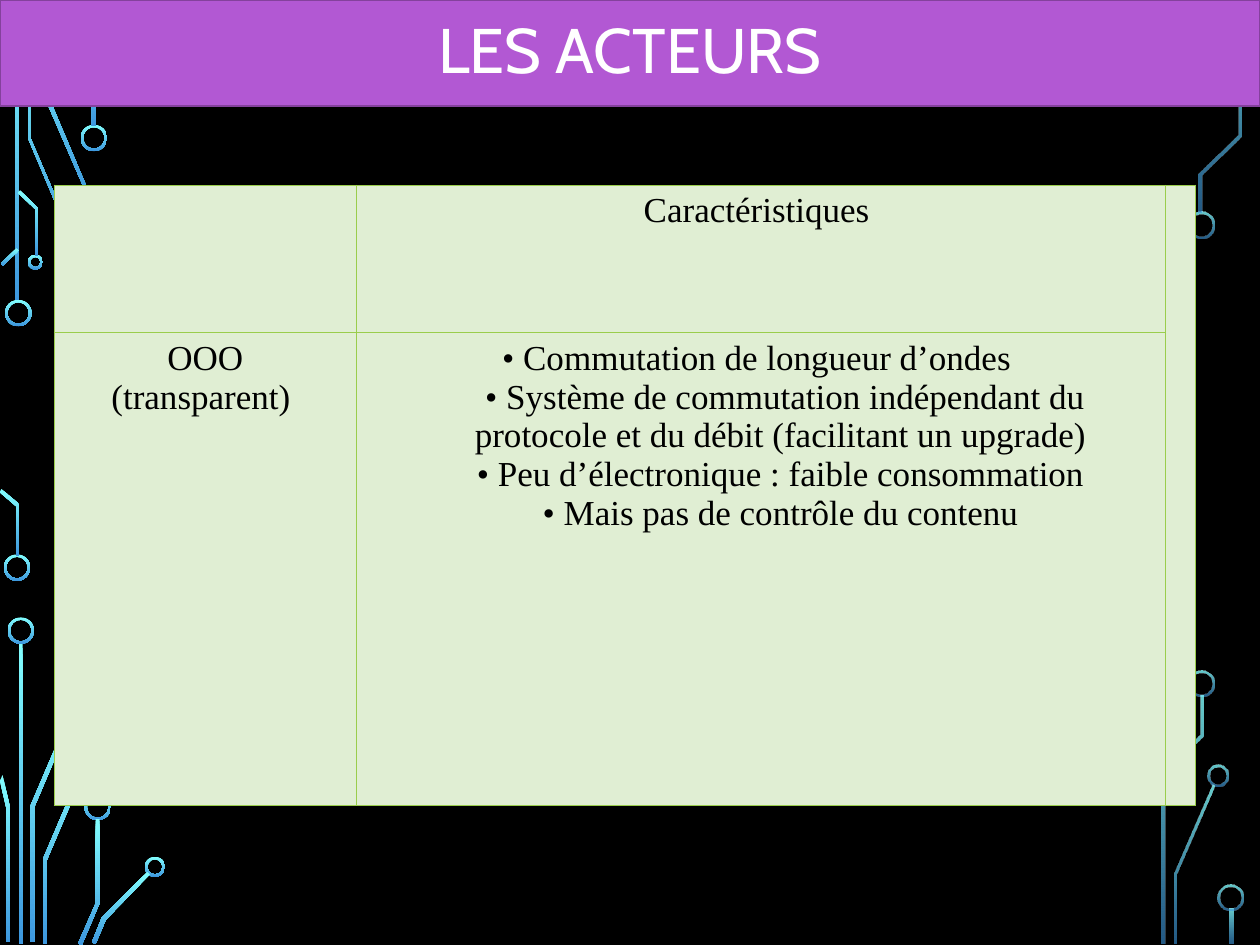
from lxml.etree import SubElement
from pptx import Presentation
from pptx.dml.color import RGBColor
from pptx.enum.shapes import MSO_SHAPE
from pptx.enum.text import MSO_ANCHOR, MSO_AUTO_SIZE, PP_ALIGN
from pptx.oxml.ns import qn
from pptx.util import Inches, Pt

TITLE = "LES ACTEURS"
FEATURES = [
    "• Commutation de longueur d’ondes ",
    "• Système de commutation indépendant du protocole et du débit (facilitant un upgrade) ",
    "• Peu d’électronique\u00a0: faible consommation ",
    "• Mais pas de contrôle du contenu ",
]
# Each cell is a list of paragraphs; a paragraph is a list of lines.
ROWS = [
    [[], [["Caractéristiques "]], []],
    [[["OOO"], ["(transparent) "]], [FEATURES], []],
]
COLUMN_WIDTHS = [2.4, 6.42, 0.24]
ROW_HEIGHTS = [1.17, 3.75]

# Circuit decoration: bars and rings by position, traces by outline.
LEFT_CIRCUIT = {
    "opacity": (100, 100),
    "bars": [(0.12, 0.01, 0.03, 2.39), (0.15, 5.1, 0.03, 2.39)],
    "rings": [  # left, top, diameter
        (0.04, 2.38, 0.21), (0.03, 4.4, 0.21), (0.64, 0.99, 0.21), (0.22, 2.02, 0.12),
        (0.06, 4.9, 0.21), (0.67, 6.3, 0.21), (1.15, 6.8, 0.16),
    ],
    "traces": [
        [(0.6, 1.99), (0.22, 1.09), (0.22, 0.01), (0.24, 0.01), (0.24, 1.09), (0.62, 1.98)],
        [(0.7, 1.57), (0.31, 0.67), (0.31, 0.01), (0.34, 0.01), (0.34, 0.66), (0.72, 1.56)],
        [(0.76, 1), (0.73, 1), (0.73, 0.33), (0.6, 0.01), (0.62, 0), (0.76, 0.33)],
        [(0.02, 2.11), (0.01, 2.09), (0.13, 1.97), (0.15, 1.99)],
        [(0.15, 4.41), (0.13, 4.41), (0.13, 4.02), (0, 3.91), (0.01, 3.88), (0.15, 4)],
        [(0.3, 2.03), (0.28, 2.03), (0.28, 1.66), (0.14, 1.53), (0.16, 1.51), (0.3, 1.65)],
        [(0.27, 7.48), (0.24, 7.48), (0.24, 6.4), (0.62, 5.51), (0.65, 5.52), (0.27, 6.41)],
        [(0.08, 7.48), (0.05, 7.48), (0.05, 6.41), (0, 6.2), (0.02, 6.15), (0.08, 6.41)],
        [(0.37, 7.49), (0.34, 7.49), (0.34, 6.82), (0.72, 5.93), (0.75, 5.94), (0.37, 6.83)],
        [(0.65, 7.5), (0.62, 7.49), (0.76, 7.17), (0.76, 6.5), (0.79, 6.5), (0.79, 7.17)],
        [(0.76, 7.49), (0.73, 7.48), (0.81, 7.28), (1.17, 6.92), (1.19, 6.94), (0.84, 7.3)],
    ],
}
RIGHT_CIRCUIT = {
    "opacity": (80, 60),
    "bars": [(9.76, 7.21, 0.03, 0.28)],
    "rings": [(9.43, 1.68, 0.21), (9.58, 6.07, 0.17), (9.43, 5.32, 0.21), (9.66, 7.02, 0.21)],
    "traces": [
        [(9.34, 7.49), (9.32, 7.49), (9.32, 6.93), (9.62, 6.23), (9.64, 6.24), (9.34, 6.94)],
        [(9.54, 1.69), (9.51, 1.69), (9.51, 1.38), (9.82, 1.07), (9.82, 0.01), (9.85, 0.01),
         (9.85, 1.08), (9.54, 1.39)],
        [(9.25, 7.49), (9.22, 7.49), (9.22, 6.13), (9.52, 5.83), (9.52, 5.52), (9.55, 5.52),
         (9.55, 5.84), (9.25, 6.14)],
    ],
}
GLOW = ("82FFFF", "3D97DE")
RING_THICKNESS = 0.02


def rgb(value):
    return RGBColor.from_string(value)


def paint_solid(fill, color):
    fill.solid()
    fill.fore_color.rgb = rgb(color)


def paint_circuit(part, opacity):
    part.shadow.inherit = False
    part.line.fill.background()
    part.fill.gradient()
    part.fill.gradient_angle = 270
    for stop, color in zip(part.fill.gradient_stops, GLOW):
        stop.color.rgb = rgb(color)
    for color_tag, percent in zip(part._element.spPr.iter(qn("a:srgbClr")), opacity):
        if percent < 100:
            SubElement(color_tag, qn("a:alpha"), val=str(percent * 1000))


def draw_circuit(shapes, circuit):
    parts = [shapes.add_shape(MSO_SHAPE.RECTANGLE, *map(Inches, bar))
             for bar in circuit["bars"]]
    for left, top, diameter in circuit["rings"]:
        ring = shapes.add_shape(MSO_SHAPE.DONUT, *map(Inches, (left, top, diameter, diameter)))
        ring.adjustments[0] = RING_THICKNESS / diameter
        parts.append(ring)
    for trace in circuit["traces"]:
        start, *others = [(Inches(x), Inches(y)) for x, y in trace]
        outline = shapes.build_freeform(*start)
        outline.add_line_segments(others, close=True)
        parts.append(outline.convert_to_shape())
    for part in parts:
        paint_circuit(part, circuit["opacity"])


def write(frame, paragraphs, *, font, size, color, hanging=0):
    """Fill a text frame with centred paragraphs, each a list of lines."""
    for index, lines in enumerate(paragraphs):
        paragraph = frame.add_paragraph() if index else frame.paragraphs[0]
        paragraph.alignment = PP_ALIGN.CENTER
        if hanging:
            properties = paragraph._p.get_or_add_pPr()
            properties.set("marL", str(Inches(hanging)))
            properties.set("indent", str(-Inches(hanging)))
        for number, line in enumerate(lines):
            if number:
                paragraph.add_line_break()
            run = paragraph.add_run()
            run.text = line
            run.font.name = font
            run.font.size = Pt(size)
            run.font.color.rgb = rgb(color)


def border_cell(cell, color, width):
    properties = cell._tc.get_or_add_tcPr()
    for position, side in enumerate(("lnL", "lnR", "lnT", "lnB")):
        line = properties.makeelement(qn(f"a:{side}"), {"w": str(Pt(width))})
        solid = SubElement(line, qn("a:solidFill"))
        SubElement(solid, qn("a:srgbClr"), val=color)
        properties.insert(position, line)


def draw_table(shapes):
    table = shapes.add_table(
        len(ROW_HEIGHTS), len(COLUMN_WIDTHS), Inches(0.43), Inches(1.47),
        Inches(sum(COLUMN_WIDTHS)), Inches(sum(ROW_HEIGHTS))).table
    for column, width in zip(table.columns, COLUMN_WIDTHS):
        column.width = Inches(width)
    for row, height in zip(table.rows, ROW_HEIGHTS):
        row.height = Inches(height)
    table.cell(0, 2).merge(table.cell(1, 2))
    for row, contents in zip(table.rows, ROWS):
        for cell, paragraphs in zip(row.cells, contents):
            paint_solid(cell.fill, "E0EED3")
            border_cell(cell, "9ACD4C", 0.75)
            write(cell.text_frame, paragraphs, font="Times New Roman", size=20,
                  color="000000", hanging=0.38)


def draw_title(slide):
    title = slide.shapes.title
    slide.shapes._spTree.append(title._element)  # in front of the circuit
    title.left, title.top, title.width, title.height = map(Inches, (0, 0, 10, 0.84))
    paint_solid(title.fill, "B258D3")
    title.line.color.rgb = rgb("84419C")
    title.line.width = Pt(1.25)
    frame = title.text_frame
    frame.auto_size = MSO_AUTO_SIZE.NONE
    frame.vertical_anchor = MSO_ANCHOR.MIDDLE
    write(frame, [[TITLE]], font="Cabin", size=36, color="FFFFFF")
    frame.paragraphs[0].line_spacing = 0.9


def main():
    deck = Presentation()
    deck.slide_width, deck.slide_height = Inches(10), Inches(7.5)
    slide = deck.slides.add_slide(deck.slide_layouts[5])
    paint_solid(slide.background.fill, "000000")
    for circuit in (LEFT_CIRCUIT, RIGHT_CIRCUIT):
        draw_circuit(slide.shapes, circuit)
    draw_title(slide)
    draw_table(slide.shapes)
    deck.save("out.pptx")


if __name__ == "__main__":
    main()
